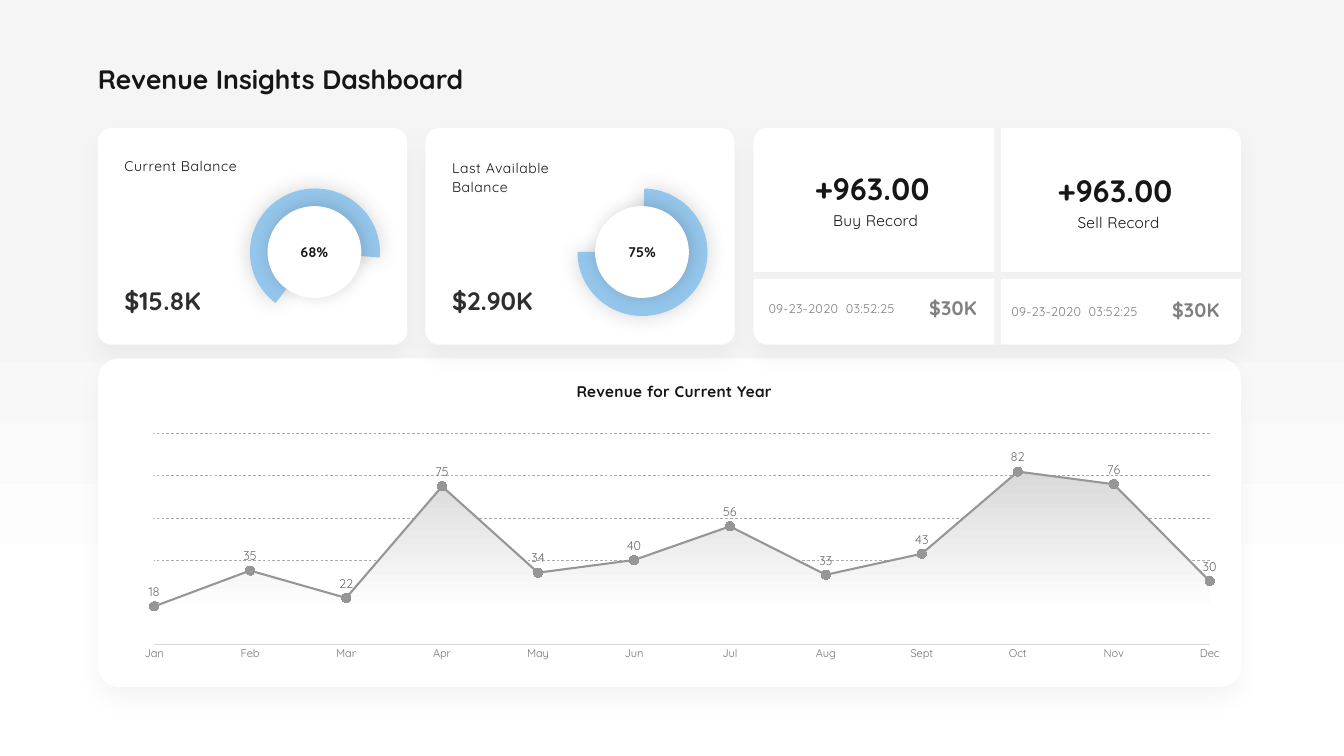
from lxml.etree import SubElement
from pptx import Presentation
from pptx.chart.data import CategoryChartData
from pptx.dml.color import RGBColor
from pptx.enum.chart import XL_CHART_TYPE, XL_LABEL_POSITION, XL_MARKER_STYLE, XL_TICK_MARK
from pptx.enum.dml import MSO_LINE
from pptx.enum.shapes import MSO_CONNECTOR, MSO_SHAPE
from pptx.enum.text import MSO_ANCHOR, PP_ALIGN
from pptx.oxml import parse_xml
from pptx.oxml.ns import nsdecls, qn
from pptx.util import Inches, Pt

FONT = "Quicksand"
DARK, GRAY, LINE = "161616", "808080", "969696"
MONTHS = "Jan Feb Mar Apr May Jun Jul Aug Sept Oct Nov Dec".split()
SALES = [18, 35, 22, 75, 34, 40, 56, 33, 43, 82, 76, 30]
SOFT = ("000000", 4, 31, 18, 90)
PAD = (0.2, 0.1, 0.2, 0.1)


def color(text):
    """Turn a hex string into a colour."""
    return RGBColor.from_string(text)


def style(font, size, shade, bold=False):
    """Set the face, size and colour of a font."""
    font.name, font.size, font.bold = FONT, Pt(size), bold
    font.color.rgb = color(shade)


def fade(fill, stops, angle):
    """Give a fill a two-stop linear gradient."""
    fill.gradient()
    fill.gradient_angle = angle
    for stop, (place, shade) in zip(fill.gradient_stops, stops):
        stop.position = place
        stop.color.rgb = color(shade)


def shade(shape, tint, alpha, blur, dist, angle):
    """Add an outer shadow to a shape."""
    shape.shadow.inherit = False
    effects = shape._element.spPr.find(qn("a:effectLst"))
    outer = SubElement(effects, qn("a:outerShdw"), blurRad=str(Pt(blur)),
                       dist=str(Pt(dist)), dir=str(angle * 60000), rotWithShape="0")
    tone = SubElement(outer, qn("a:srgbClr"), val=tint)
    SubElement(tone, qn("a:alpha"), val=str(alpha * 1000))


def solid(shapes, kind, box, fill, shadow, adjust=()):
    """Draw a filled, shadowed preset shape without an outline."""
    shape = shapes.add_shape(kind, *map(Inches, box))
    shape.fill.solid()
    shape.fill.fore_color.rgb = color(fill)
    shape.line.fill.background()
    for i, value in enumerate(adjust):
        shape.adjustments[i] = value
    shade(shape, *shadow)
    return shape


def card(slide, box):
    """Draw a white rounded card."""
    return solid(slide.shapes, MSO_SHAPE.ROUNDED_RECTANGLE, box, "FFFFFF", SOFT, [0.065])


def label(slide, box, text, size, tint=DARK, bold=False, track=0, align=PP_ALIGN.LEFT,
          anchor=MSO_ANCHOR.TOP, pad=(0, 0, 0, 0), gap=None, lead=None):
    """Place one paragraph of text."""
    frame = slide.shapes.add_textbox(*map(Inches, box)).text_frame
    frame.word_wrap = True
    frame.vertical_anchor = anchor
    frame.margin_left, frame.margin_top, frame.margin_right, frame.margin_bottom = map(Inches, pad)
    para = frame.paragraphs[0]
    para.alignment = align
    run = para.add_run()
    run.text = text
    style(para.font, size, tint, bold)
    if gap:
        para.space_before = para.space_after = Pt(gap)
    if lead:
        para.line_spacing = Pt(lead)
    if track:
        run._r.get_or_add_rPr().set("spc", str(int(track * 100)))


def rule(slide, x1, y1, x2, y2):
    """Draw a pale divider."""
    line = slide.shapes.add_connector(MSO_CONNECTOR.STRAIGHT, *map(Inches, (x1, y1, x2, y2)))
    line.line.width = Pt(10)
    line.line.color.rgb = color("F2F2F2")
    SubElement(line._element.spPr, qn("a:effectLst"))
    return line


def balance(slide, box, name, head, anchor, lead, total, share, arc):
    """Build a balance card with its ring gauge."""
    x, y = box[:2]
    card(slide, box)
    top, high = head
    label(slide, (x + 0.53, y + top, 2.51, high), name, 20, track=0.8, anchor=anchor, lead=lead)
    label(slide, (x + 0.53, y + 3.13, 2.24, 0.61), total, 36, "2E2E2E", True)
    ring = slide.shapes.add_group_shape().shapes
    solid(ring, MSO_SHAPE.PIE, (x + 3.02, y + 1.2, 2.58, 2.53), "94C5EA",
          ("4D4D4D", 24, 30, 0, 0), arc)
    hub = solid(ring, MSO_SHAPE.OVAL, (x + 3.37, y + 1.55, 1.86, 1.82), "FFFFFF",
                ("000000", 14, 24, 3, 315))
    hub.text_frame.vertical_anchor = MSO_ANCHOR.MIDDLE
    para = hub.text_frame.paragraphs[0]
    para.text, para.alignment = share, PP_ALIGN.CENTER
    style(para.font, 20, DARK, True)


def record(slide, x, y, name):
    """Write one record column."""
    mid = {"align": PP_ALIGN.CENTER, "pad": PAD, "track": 0.4}
    label(slide, (x + 0.27, y + 1.54, 4.31, 0.58), name, 22, gap=12, **mid)
    label(slide, (x + 0.88, y + 0.83, 2.96, 0.71), "+963.00", 44, bold=True,
          anchor=MSO_ANCHOR.MIDDLE, **mid)
    label(slide, (x + 0.1, y + 3.33, 2.99, 0.51), "09-23-2020  03:52:25", 18, GRAY,
          track=0.4, pad=PAD, gap=12)
    label(slide, (x + 3.19, y + 3.2, 1.54, 0.71), "$30K", 28, GRAY, True,
          anchor=MSO_ANCHOR.MIDDLE, **mid)


def records(slide, box):
    """Build the card of buy and sell records."""
    x, y, wide, high = box
    back = card(slide, box)
    rule(slide, x, y + 2.92, x + wide, y + 2.92)
    split = rule(slide, x + wide / 2, y, x + wide / 2, y + high)
    split.begin_connect(back, 0)
    split.end_connect(back, 2)
    record(slide, x, y, "Buy Record")
    record(slide, x + 4.82, y + 0.05, "Sell Record")


def combine(chart):
    """Move the second series into a line plot and fix the plot layout."""
    plot = chart._chartSpace.chart.plotArea
    area = plot.find(qn("c:areaChart"))
    lines = parse_xml(f'<c:lineChart {nsdecls("c")}><c:grouping val="standard"/>'
                      '<c:varyColors val="0"/><c:marker val="1"/></c:lineChart>')
    lines.insert(2, area.findall(qn("c:ser"))[1])
    for axis in area.findall(qn("c:axId")):
        SubElement(lines, qn("c:axId"), val=axis.get("val"))
    area.addnext(lines)
    plot.find(qn("c:valAx")).find(qn("c:crossBetween")).set("val", "midCat")
    for old in plot.findall(qn("c:layout")):
        plot.remove(old)
    layout = parse_xml(f'<c:layout {nsdecls("c")}><c:manualLayout/></c:layout>')
    plot.insert(0, layout)
    rules = [("layoutTarget", "inner"), ("xMode", "edge"), ("yMode", "edge"),
             ("x", "0.035"), ("y", "0.048"), ("w", "0.965"), ("h", "0.818")]
    for tag, value in rules:
        SubElement(layout[0], qn("c:" + tag), val=value)


def revenue(slide, box):
    """Build the card with the yearly chart."""
    x, y = box[:2]
    card(slide, box)
    label(slide, (x + 8.74, y + 0.19, 5.36, 0.92), "Revenue for Current Year", 22, bold=True,
          track=0.4, align=PP_ALIGN.CENTER, anchor=MSO_ANCHOR.MIDDLE, pad=(0.04, 0, 0, 0))
    data = CategoryChartData()
    data.categories = MONTHS
    for name in ("Series 1", "Series 2"):
        data.add_series(name, SALES)
    spot = map(Inches, (x + 0.36, y + 1.25, 21.9, 5.11))
    chart = slide.shapes.add_chart(XL_CHART_TYPE.AREA, *spot, data).chart
    chart.has_legend = chart.has_title = False
    style(chart.font, 14, "737373")
    combine(chart)
    area, line = chart.plots
    area.vary_by_categories = False
    fade(area.series[0].format.fill, [(0.19, "FFFFFF"), (1, "D9D9D9")], 90)
    curve = line.series[0]
    curve.smooth = False
    curve.format.line.width = Pt(3)
    curve.format.line.color.rgb = color(LINE)
    dot = curve.marker
    dot.style, dot.size = XL_MARKER_STYLE.CIRCLE, 13
    dot.format.fill.solid()
    dot.format.fill.fore_color.rgb = color(LINE)
    dot.format.line.color.rgb = color(LINE)
    tags = curve.data_labels
    tags.show_value, tags.position = True, XL_LABEL_POSITION.ABOVE
    style(tags.font, 18, "6C6C6C")
    cats, vals = chart.category_axis, chart.value_axis
    cats.major_tick_mark = cats.minor_tick_mark = XL_TICK_MARK.NONE
    cats.has_major_gridlines = False
    cats.format.line.width = Pt(0.25)
    cats.format.line.color.rgb = color("D8D8D8")
    style(cats.tick_labels.font, 16, "737373")
    vals.visible = False
    vals.minimum_scale, vals.maximum_scale, vals.major_unit = 0, 100, 20
    vals.has_major_gridlines = True
    grid = vals.major_gridlines.format.line
    grid.width, grid.dash_style = Pt(1), MSO_LINE.DASH
    grid.color.rgb = color("ADAAAB")


def main():
    """Build and save the dashboard."""
    deck = Presentation()
    deck.slide_width, deck.slide_height = Inches(26.67), Inches(15)
    slide = deck.slides.add_slide(deck.slide_layouts[6])
    fade(slide.background.fill, [(0.4, "F5F5F5"), (0.8, "FFFFFF")], 270)
    label(slide, (1.94, 1.24, 17.14, 0.64), "Revenue Insights Dashboard", 38, bold=True)
    balance(slide, (1.94, 2.54, 6.14, 4.3), "Current Balance", (0.57, 0.34),
            MSO_ANCHOR.BOTTOM, None, "$15.8K", "68%", (76.7, 2.81))
    revenue(slide, (1.94, 7.11, 22.69, 6.52))
    balance(slide, (8.44, 2.54, 6.14, 4.3), "Last Available Balance", (0.58, 0.75),
            MSO_ANCHOR.MIDDLE, 28, "$2.90K", "75%", (162.97, 108.25))
    records(slide, (14.95, 2.54, 9.68, 4.3))
    deck.save("out.pptx")


if __name__ == "__main__":
    main()
